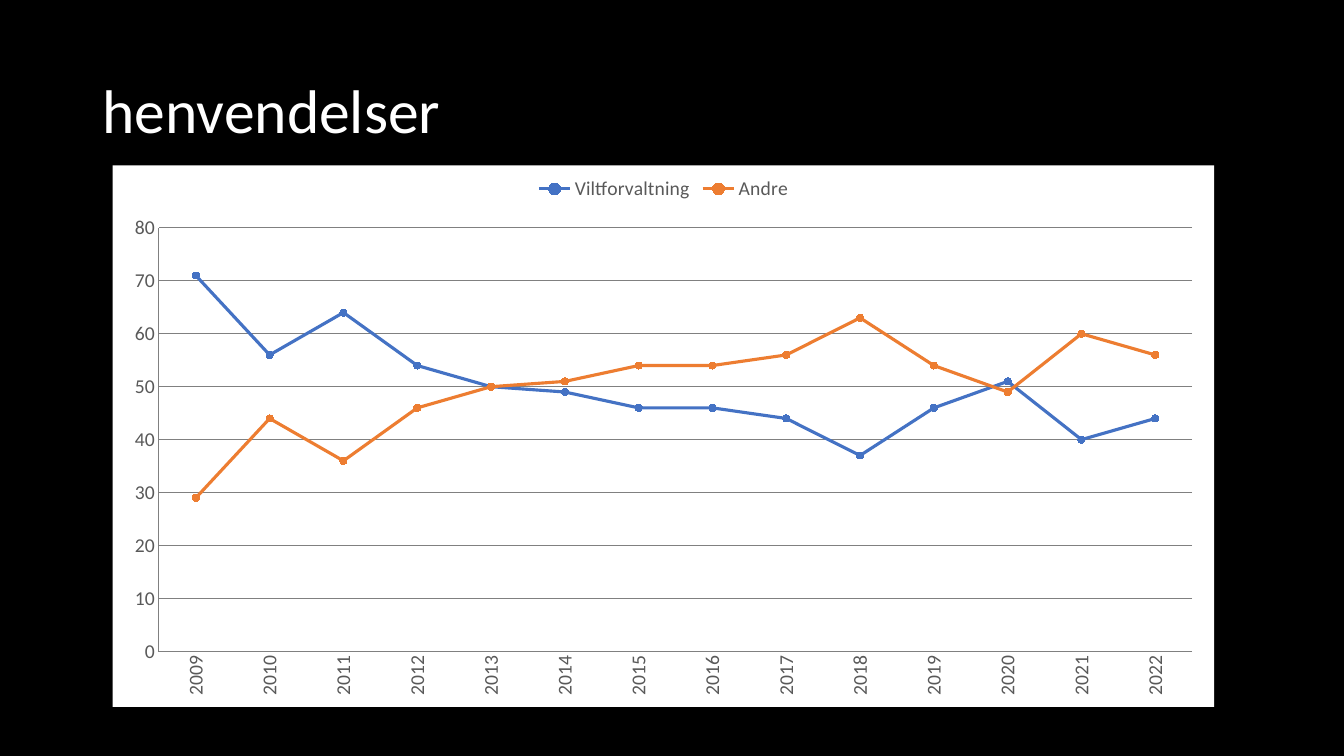
from dataclasses import dataclass

from lxml import etree
from pptx import Presentation
from pptx import util as u
from pptx.chart.data import CategoryChartData
from pptx.dml.color import RGBColor
from pptx.enum import chart as charts, text
from pptx.oxml import parse_xml
from pptx.oxml.ns import nsdecls

BLACK = RGBColor(0x00, 0x00, 0x00)
WHITE = RGBColor(0xFF, 0xFF, 0xFF)
GREY = RGBColor(0x80, 0x80, 0x80)
LABEL = RGBColor(0x59, 0x59, 0x59)
BLUE = RGBColor(0x44, 0x72, 0xC4)
ORANGE = RGBColor(0xED, 0x7D, 0x31)
FONT = "Calibri"
YEARS = range(2009, 2023)


@dataclass(frozen=True)
class Trend:
    name: str
    color: RGBColor
    shares: tuple[int, ...]


TRENDS = [
    Trend("Viltforvaltning", BLUE,
          (71, 56, 64, 54, 50, 49, 46, 46, 44, 37, 46, 51, 40, 44)),
    Trend("Andre", ORANGE,
          (29, 44, 36, 46, 50, 51, 54, 54, 56, 63, 54, 49, 60, 56)),
]


def apply(target, values: dict) -> None:
    for name, value in values.items():
        setattr(target, name, value)


def style_font(font, size: float, color: RGBColor) -> None:
    apply(font, {"name": FONT, "size": u.Pt(size)})
    font.color.rgb = color


def style_line(line, color: RGBColor, width: float) -> None:
    line.color.rgb = color
    line.width = u.Pt(width)


def add_title(page, words: str) -> None:
    box = page.shapes.title
    apply(box, {"left": u.Cm(2.33), "top": u.Cm(1.01),
                "width": u.Cm(29.21), "height": u.Cm(3.68)})
    apply(box.text_frame, {"text": words, "word_wrap": True,
                           "vertical_anchor": text.MSO_ANCHOR.MIDDLE})
    para = box.text_frame.paragraphs[0]
    apply(para, {"alignment": text.PP_ALIGN.LEFT, "line_spacing": 0.9})
    style_font(para.runs[0].font, 44, WHITE)


def style_axis(axis) -> None:
    apply(axis, {"major_tick_mark": charts.XL_TICK_MARK.NONE,
                 "minor_tick_mark": charts.XL_TICK_MARK.NONE})
    style_font(axis.tick_labels.font, 14, LABEL)
    style_line(axis.format.line, GREY, 0.75)


def add_line_chart(page, trends: list[Trend]) -> None:
    data = CategoryChartData(number_format="0")
    data.categories = [str(year) for year in YEARS]
    for trend in trends:
        data.add_series(trend.name, trend.shares)
    chart = page.shapes.add_chart(
        charts.XL_CHART_TYPE.LINE_MARKERS, u.Cm(2.84), u.Cm(4.17),
        u.Cm(27.76), u.Cm(13.64), data).chart
    style_font(chart.font, 14, BLACK)
    chart.has_title = False

    # White chart area
    area = parse_xml(
        f'<c:spPr {nsdecls("c", "a")}><a:solidFill><a:srgbClr val="{WHITE}"/>'
        '</a:solidFill><a:ln><a:noFill/></a:ln></c:spPr>')
    chart.element.find("c:txPr", chart.element.nsmap).addprevious(area)

    # Legend
    chart.has_legend = True
    apply(chart.legend, {"position": charts.XL_LEGEND_POSITION.TOP,
                         "include_in_layout": False})
    style_font(chart.legend.font, 14, LABEL)

    # Axes, with upright years
    for axis in (chart.category_axis, chart.value_axis):
        style_axis(axis)
    body = etree.ETXPath(
        "//{http://schemas.openxmlformats.org/drawingml/2006/chart}catAx"
        "//{http://schemas.openxmlformats.org/drawingml/2006/main}bodyPr")
    apply_rotation = {"rot": "-5400000", "vert": "horz"}
    for key, value in apply_rotation.items():
        body(chart.element)[0].set(key, value)
    apply(chart.value_axis, {"minimum_scale": 0, "maximum_scale": 80,
                             "major_unit": 10, "has_major_gridlines": True})
    apply(chart.value_axis.tick_labels, {"number_format": "0",
                                         "number_format_is_linked": False})
    style_line(chart.value_axis.major_gridlines.format.line, GREY, 0.75)

    # Lines and markers
    plot = chart.plots[0]
    plot.vary_by_categories = False
    for series, trend in zip(plot.series, trends):
        series.smooth = False
        style_line(series.format.line, trend.color, 2.25)
        apply(series.marker, {"style": charts.XL_MARKER_STYLE.CIRCLE, "size": 5})
        series.marker.format.fill.solid()
        series.marker.format.fill.fore_color.rgb = trend.color
        style_line(series.marker.format.line, trend.color, 0.75)


def main() -> None:
    deck = Presentation()
    apply(deck, {"slide_width": u.Cm(33.87), "slide_height": u.Cm(19.05)})
    page = deck.slides.add_slide(deck.slide_layouts[5])
    page.background.fill.solid()
    page.background.fill.fore_color.rgb = BLACK
    add_title(page, "henvendelser")
    add_line_chart(page, TRENDS)
    deck.save("out.pptx")


if __name__ == "__main__":
    main()
